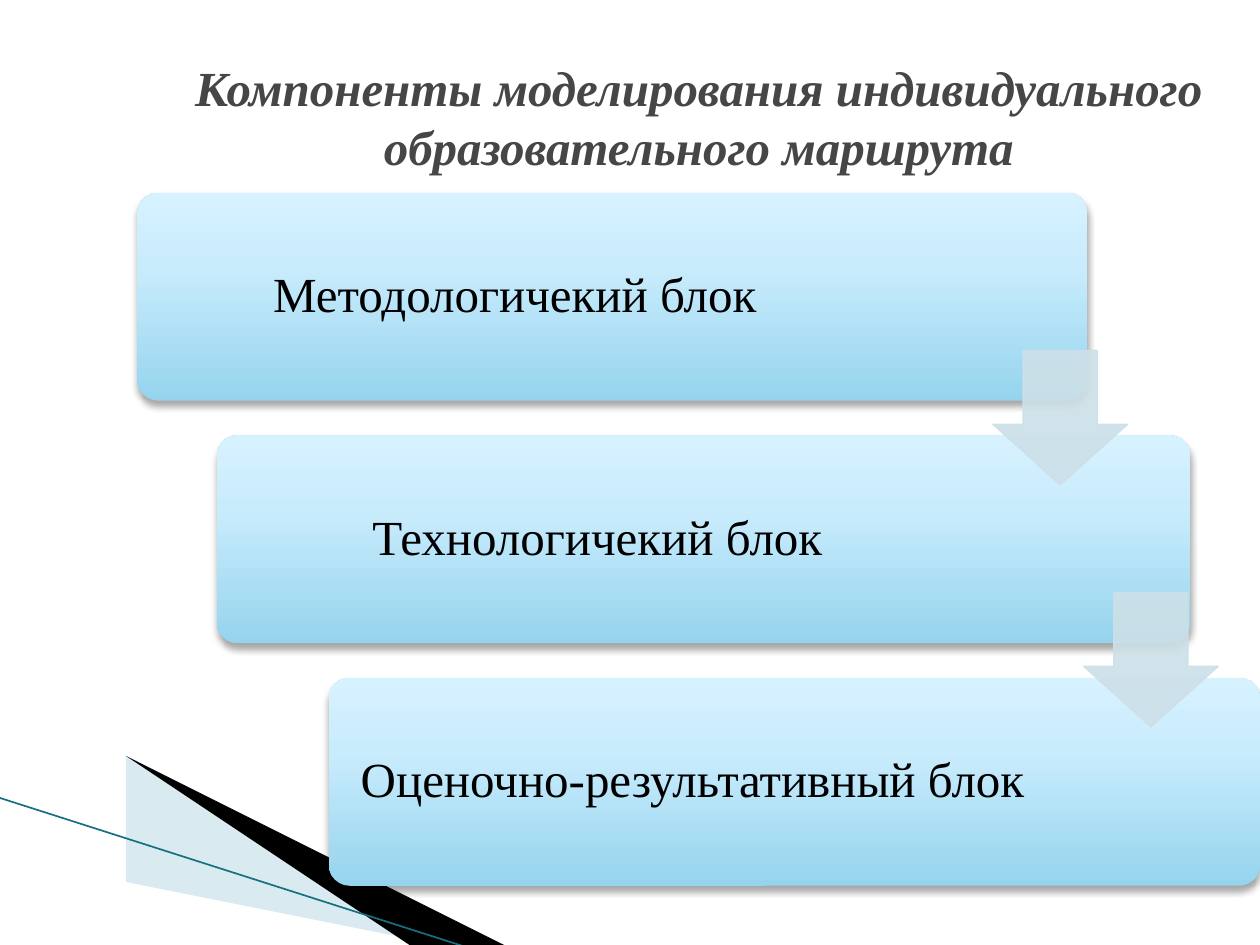
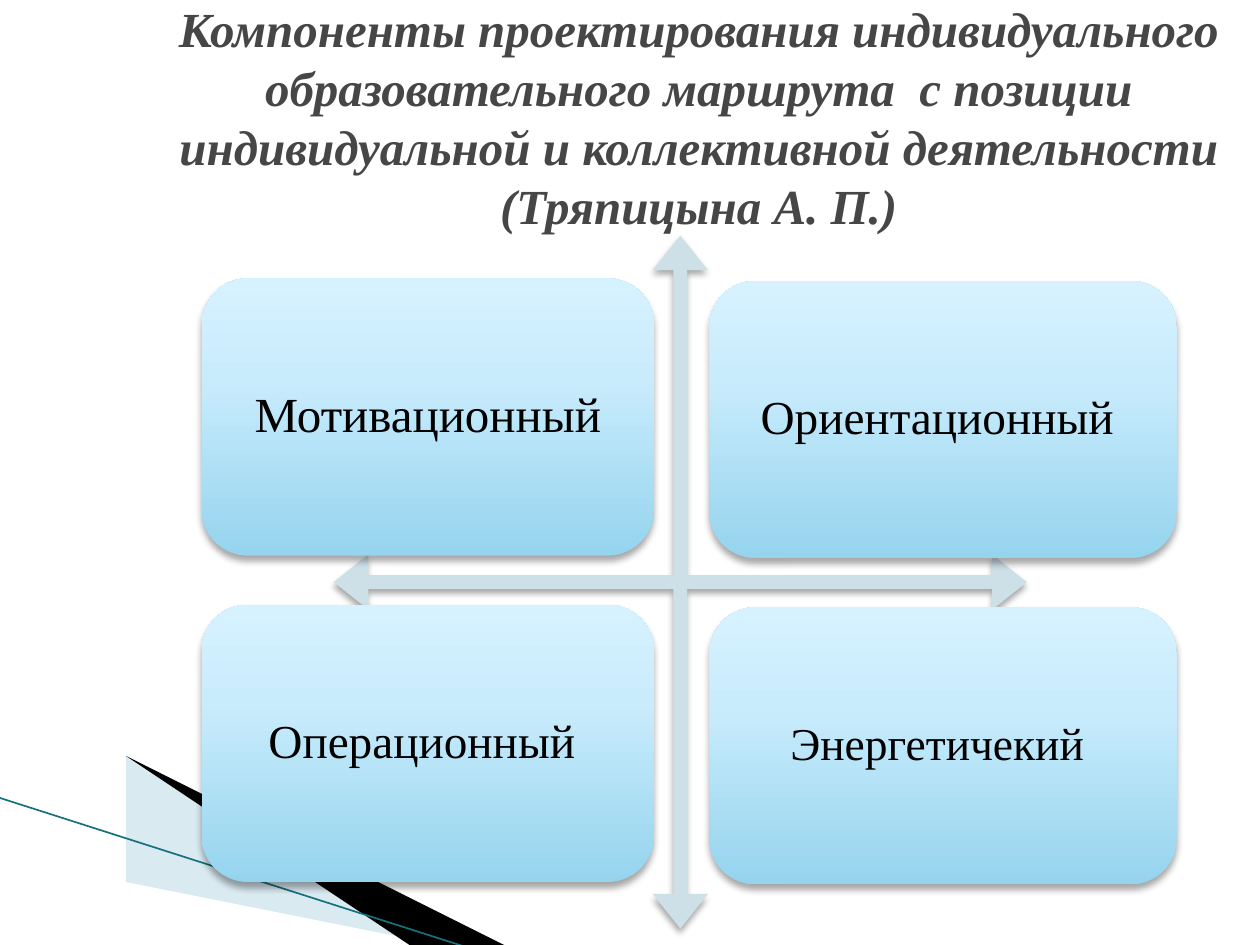
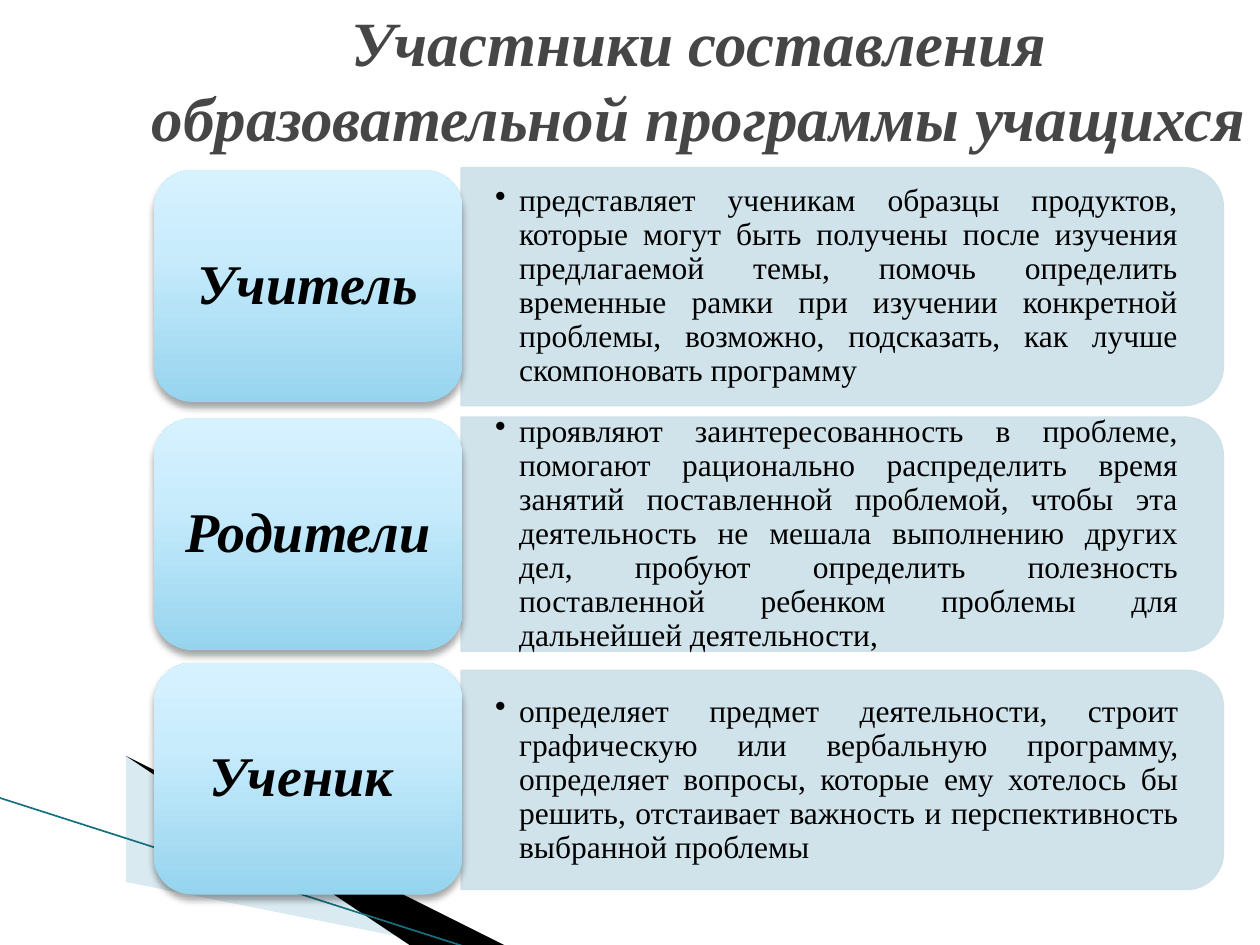
from lxml.etree import SubElement
from pptx import Presentation
from pptx.dml.color import RGBColor
from pptx.enum.shapes import MSO_CONNECTOR, MSO_SHAPE
from pptx.enum.text import MSO_ANCHOR, MSO_AUTO_SIZE, PP_ALIGN
from pptx.oxml import parse_xml
from pptx.oxml.ns import nsdecls, qn
from pptx.util import Inches, Pt

C = {"title": "464646", "text": "000000", "pale": "CDE0E8", "wedge": "A0CBDC",
     "edge": "17707F", "low": "96D4EE", "mid": "C9ECFC", "high": "D7F2FF"}
FONT = "Times New Roman"
CORNER = 1 / 6      # corner radius as a share of a shape's height
CORNER_PAD = 0.29   # text inset as a share of the corner radius

STOPS = "".join(f'<a:gs pos="{pos}000"><a:srgbClr val="{C[name]}"/></a:gs>'
                for pos, name in ((0, "low"), (65, "mid"), (100, "high")))
GRADIENT = (f'<a:gradFill {nsdecls("a")} rotWithShape="1"><a:gsLst>{STOPS}</a:gsLst>'
            '<a:lin ang="16200000" scaled="0"/></a:gradFill>')
SHADOW = (f'<a:outerShdw {nsdecls("a")} blurRad="{Pt(4)}" dist="{Pt(3)}" dir="5400000" '
          'rotWithShape="0"><a:srgbClr val="000000"><a:alpha val="35000"/></a:srgbClr>'
          '</a:outerShdw>')

shaded, translucent = [], []    # shapes finished together at the end


def write(s, box, text, size, inset, bold=False, bullet=False):
    """Add a middle-anchored text box; inset is (horizontal, vertical) in inches."""
    tf = s.shapes.add_textbox(*map(Inches, box)).text_frame
    tf.word_wrap = True
    tf.vertical_anchor = MSO_ANCHOR.MIDDLE
    tf.margin_left = tf.margin_right = Inches(inset[0])
    tf.margin_top = tf.margin_bottom = Inches(inset[1])
    p = tf.paragraphs[0]
    p.alignment = PP_ALIGN.JUSTIFY if bullet else PP_ALIGN.CENTER
    p.line_spacing = 0.9
    if bullet:
        pPr = p._p.get_or_add_pPr()
        pPr.set("marL", str(Inches(0.19)))
        pPr.set("indent", str(-Inches(0.19)))
        SubElement(pPr, qn("a:buChar")).set("char", "•")
    r = p.add_run()
    r.text = text
    r.font.name, r.font.size = FONT, Pt(size)
    r.font.bold = r.font.italic = bold
    r.font.color.rgb = RGBColor.from_string(C["text"])


def card(s, box, text, size, corner=CORNER, cut=0, inset=(0.12, 0.12), bold=False):
    """Add a gradient card; cut keeps that width at the right free of text."""
    x, y, w, h = box
    shape = s.shapes.add_shape(MSO_SHAPE.ROUNDED_RECTANGLE, *map(Inches, box))
    shape.adjustments[0] = corner
    shape.line.fill.background()
    shape.line._ln.addprevious(parse_xml(GRADIENT))
    shaded.append(shape)
    pad = CORNER_PAD * corner * h
    write(s, (x + pad, y + pad, w - 2 * pad - cut, h - 2 * pad), text, size, inset, bold)


prs = Presentation()
prs.slide_width, prs.slide_height = Inches(10), Inches(7.5)
layout = prs.slide_layouts[5]

# Slides and titles
titles = [
    ("Компоненты моделирования индивидуального образовательного маршрута", 28, 0.3),
    ("Компоненты проектирования индивидуального образовательного маршрута  с позиции "
     "индивидуальной и коллективной деятельности (Тряпицына А. П.)", 28, 0.3),
    ("Участники составления образовательной программы учащихся", 36, 0),
]
slides = []
for text, size, top in titles:
    s = prs.slides.add_slide(layout)
    slides.append(s)
    title = s.shapes.title
    title.left, title.top = Inches(1.09), Inches(top)
    title.width, title.height = Inches(8.91), Inches(1.25)
    tf = title.text_frame
    tf.word_wrap = True
    tf.auto_size = MSO_AUTO_SIZE.NONE
    tf.vertical_anchor = MSO_ANCHOR.MIDDLE
    tf.margin_left = tf.margin_right = Inches(0.05)
    p = tf.paragraphs[0]
    p.alignment = PP_ALIGN.CENTER
    r = p.add_run()
    r.text = text
    r.font.name, r.font.size = FONT, Pt(size)
    r.font.bold = r.font.italic = True
    r.font.color.rgb = RGBColor.from_string(C["title"])
blocks, components, participants = slides

# Corner wedges, drawn once and moved to the shared layout
wedges = [
    ([(0.55, 6.51), (5.95, 7.51), (4.56, 7.51), (0.55, 6.5)], "wedge", 40),
    ([(0.53, 6.49), (4.57, 7.51), (3.72, 7.52), (0.54, 6.5)], "text", 100),
]
decor = []
for points, colour, alpha in wedges:
    builder = blocks.shapes.build_freeform(*points[0], scale=Inches(1))
    builder.add_line_segments(points[1:], close=True)
    wedge = builder.convert_to_shape()
    wedge.shadow.inherit = False
    wedge.fill.solid()
    wedge.fill.fore_color.rgb = RGBColor.from_string(C[colour])
    wedge.line.fill.background()
    translucent.append((wedge, alpha))
    decor.append(wedge)
edge = blocks.shapes.add_connector(MSO_CONNECTOR.STRAIGHT, *map(Inches, (-0.01, 6.33, 3.71, 7.52)))
edge.line.color.rgb = RGBColor.from_string(C["edge"])
edge.line.width = Pt(0.95)
SubElement(edge.element.spPr, qn("a:effectLst"))
decor.append(edge)
for number, shape in enumerate(decor, start=20):
    shape.element.xpath(".//p:cNvPr")[0].set("id", str(number))
    layout.element.cSld.spTree.append(shape.element)

# Slide 1: three descending blocks joined by arrows
pale = []
steps = [("Методологичекий блок", 1.09, 7.54, 1.55),
         ("Технологичекий блок", 1.72, 7.73, 1.69),
         ("Оценочно-результативный блок", 2.61, 7.39, 1.62)]
for row, (text, x, w, cut) in enumerate(steps):
    card(blocks, (x, 1.53 + 1.925 * row, w, 1.65), text, 28, corner=0.1, cut=cut)
for row in range(len(steps) - 1):
    arrow = blocks.shapes.add_shape(
        MSO_SHAPE.DOWN_ARROW, Inches(7.88 + 0.72 * row), Inches(2.78 + 1.92 * row),
        Inches(1.07), Inches(1.07))
    arrow.adjustments[0], arrow.adjustments[1] = 0.55, 0.45
    pale.append(arrow)

# Slide 2: two by two cards around a cross of arrows
cross = components.shapes.add_shape(MSO_SHAPE.QUAD_ARROW, *map(Inches, (2.65, 1.87, 5.5, 5.5)))
for i, value in enumerate((0.02, 0.04, 0.05)):
    cross.adjustments[i] = value
cross.fill.solid()
cross.fill.fore_color.rgb = RGBColor.from_string(C["pale"])
cross.line.fill.background()
shaded.append(cross)
columns = [(1.6, 2.21, 3.59), (5.63, 2.23, 3.71)]
names = [("Мотивационный", 28), ("Ориентационный ", 27),
         ("Операционный ", 27), ("Энергетичекий ", 26)]
for i, (text, size) in enumerate(names):
    row, col = divmod(i, 2)
    x, top, w = columns[col]
    card(components, (x, top + 2.59 * row, w, 2.2), text, size)

# Slide 3: participant cards, each with a panel describing the role
PANEL_X, PANEL_W = 3.66, 6.05
roles = [
    ("Учитель", 1.35, 1.33, 1.89,
     "представляет ученикам образцы продуктов, которые могут быть получены после изучения "
     "предлагаемой темы, помочь определить временные рамки при изучении конкретной проблемы, "
     "возможно, подсказать, как лучше скомпоновать программу"),
    ("Родители ", 3.32, 3.31, 1.86,
     "проявляют заинтересованность в проблеме, помогают рационально распределить время "
     "занятий поставленной проблемой, чтобы эта деятельность не мешала выполнению других "
     "дел, пробуют определить полезность поставленной ребенком проблемы для дальнейшей "
     "деятельности,"),
    ("Ученик ", 5.26, 5.32, 1.74,
     "определяет предмет деятельности, строит графическую или вербальную программу, "
     "определяет вопросы, которые ему хотелось бы решить, отстаивает важность и "
     "перспективность выбранной проблемы"),
]
for name, card_y, y, h, duty in roles:
    # The panel is turned by 90°, so its width and height swap around its centre
    panel = participants.shapes.add_shape(
        MSO_SHAPE.ROUND_2_SAME_RECTANGLE, Inches(PANEL_X + (PANEL_W - h) / 2),
        Inches(y + (h - PANEL_W) / 2), Inches(h), Inches(PANEL_W))
    panel.rotation = 90
    pale.append(panel)
    pad = CORNER_PAD * CORNER * h
    write(participants, (PANEL_X, y + pad, PANEL_W - pad, h - 2 * pad), duty, 18,
          (0.27, 0.14), bullet=True)
    card(participants, (1.22, card_y, 2.45, 1.84), name, 32, inset=(0.13, 0.07), bold=True)

# Shared finishes
for shape in pale:
    shape.shadow.inherit = False
    shape.fill.solid()
    shape.fill.fore_color.rgb = RGBColor.from_string(C["pale"])
    shape.line.color.rgb = RGBColor.from_string(C["pale"])
    shape.line.width = Pt(0.75)
    translucent.append((shape, 90))
for shape, alpha in translucent:
    for colour in shape.element.spPr.iter(qn("a:srgbClr")):
        SubElement(colour, qn("a:alpha")).set("val", str(alpha * 1000))
for shape in shaded:
    shape.shadow.inherit = False
    shape.element.spPr.find(qn("a:effectLst")).append(parse_xml(SHADOW))

prs.save("out.pptx")
